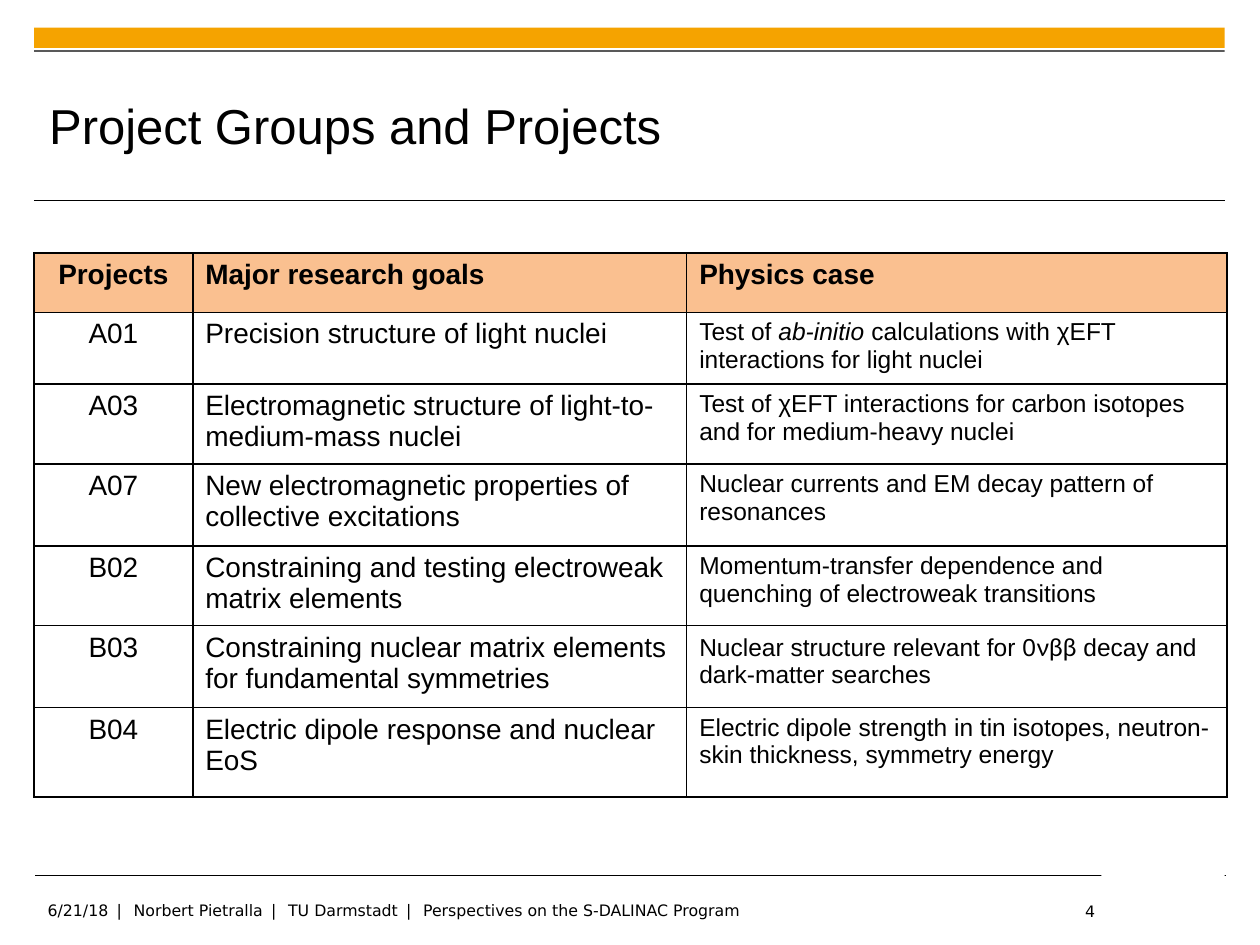
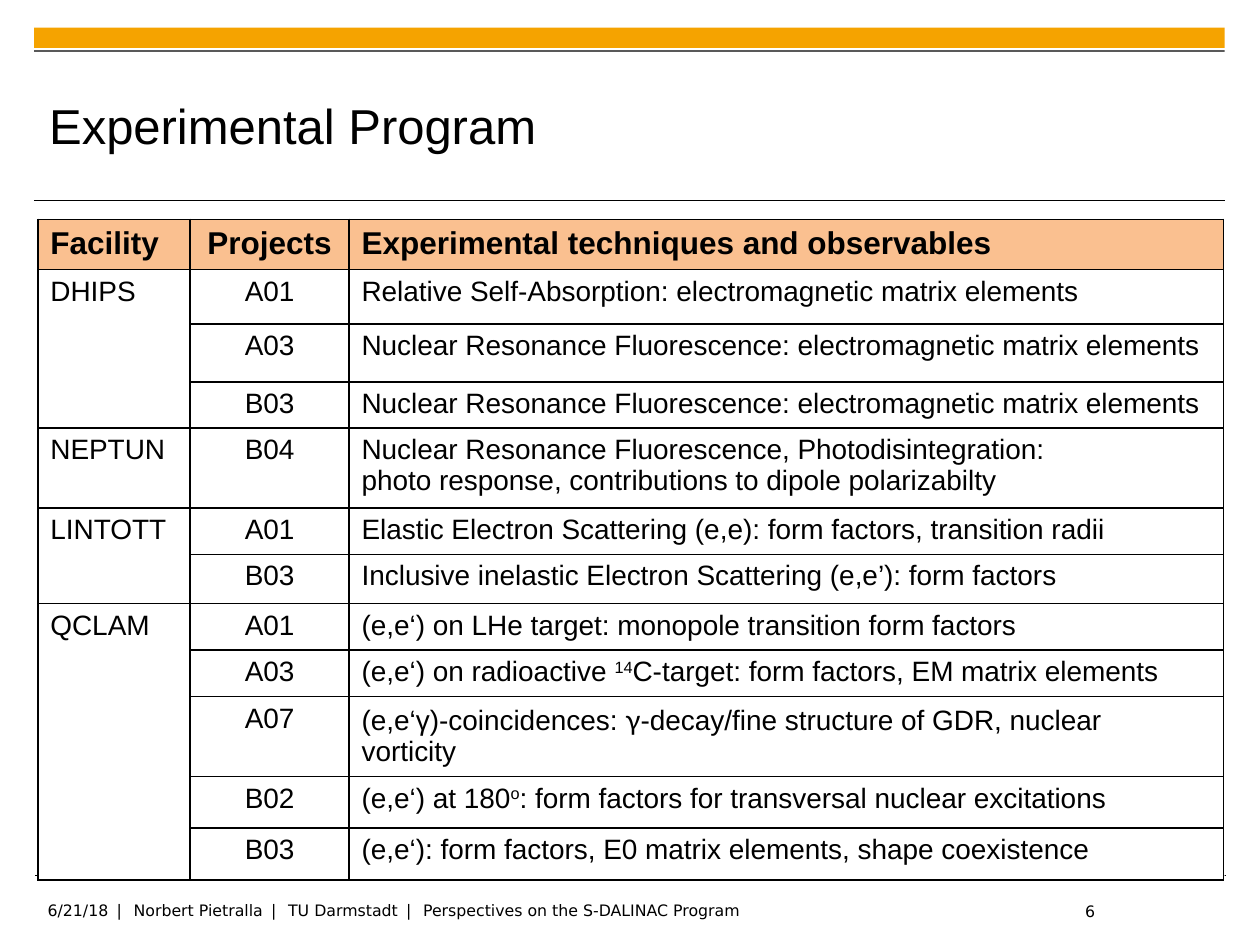
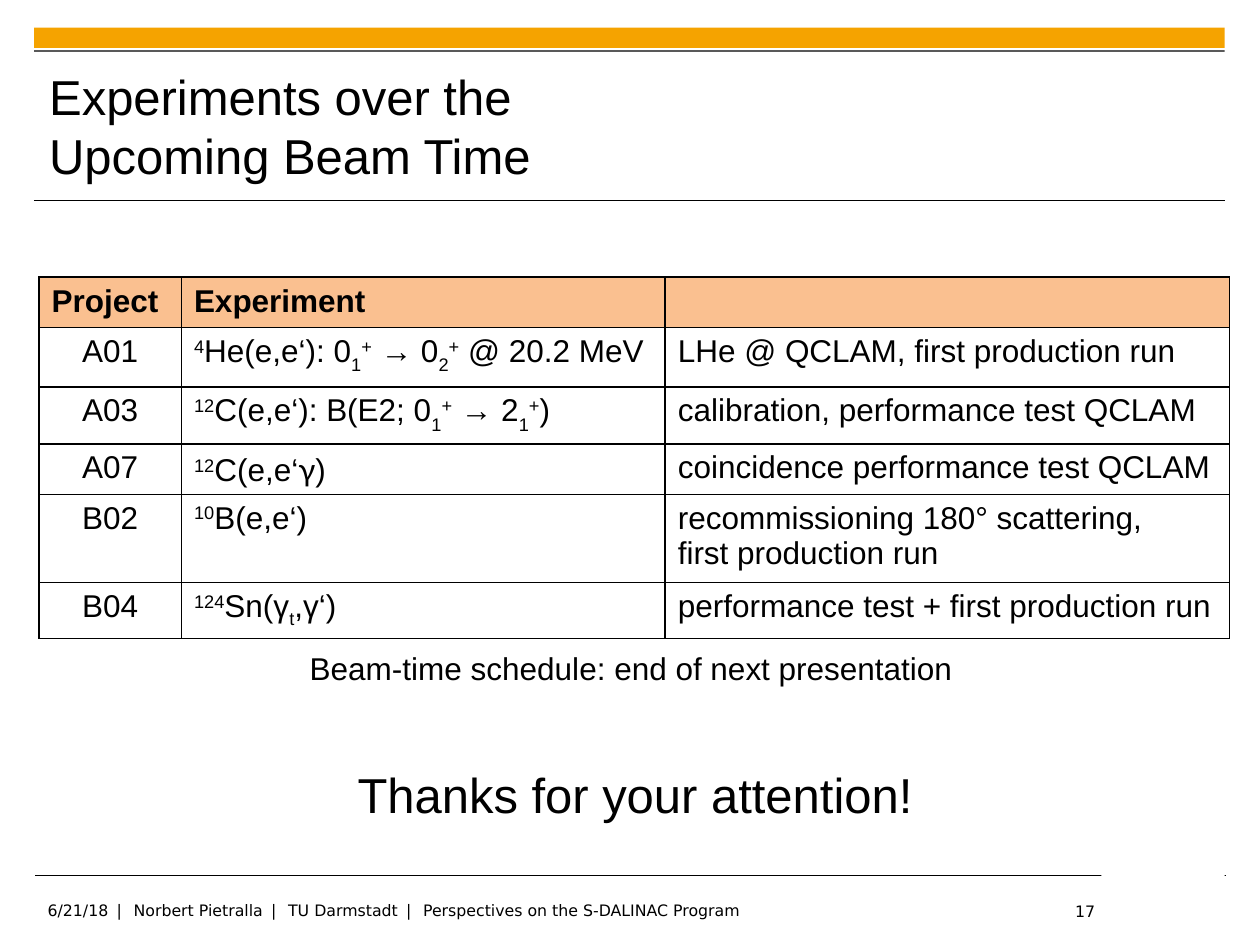
from dataclasses import dataclass
from functools import partial

from lxml.etree import SubElement
from pptx import Presentation
from pptx.dml.color import RGBColor
from pptx.enum.shapes import MSO_CONNECTOR, MSO_SHAPE
from pptx.enum.text import MSO_ANCHOR, PP_ALIGN
from pptx.oxml.ns import qn
from pptx.util import Inches, Pt


@dataclass(frozen=True)
class Theme:
    """Colours, fonts and type sizes shared by all slides."""
    ink: RGBColor = RGBColor(0x00, 0x00, 0x00)
    paper: RGBColor = RGBColor(0xFF, 0xFF, 0xFF)
    band: RGBColor = RGBColor(0xF5, 0xA3, 0x00)
    header: RGBColor = RGBColor(0xFA, 0xC0, 0x90)
    font: str = "Arial"
    footer_font: str = "DejaVu Sans"
    greek_font: str = "Lato"
    title_size: int = 28
    large_size: int = 18
    body_size: int = 16
    small_size: int = 14
    footer_size: int = 9
    rule_width: float = 0.6
    border_width: float = 1


@dataclass(frozen=True)
class Segment:
    """A stretch of text with its own baseline, slant or font."""
    text: str
    baseline: int = 0
    italic: bool = False
    font: str = Theme.font


THEME = Theme()
sup = partial(Segment, baseline=30)
sub = partial(Segment, baseline=-30)
italic = partial(Segment, italic=True)
greek = partial(Segment, font=THEME.greek_font)

FOOTER_PARTS = ["6/21/18", "Norbert Pietralla", "TU Darmstadt",
                "Perspectives on the S-DALINAC Program"]

PROJECT_ROWS = [
    ("Projects", "Major research goals", "Physics case"),
    ("A01", "Precision structure of light nuclei",
     ["Test of ", italic("ab-initio "),
      "calculations with χEFT interactions for light nuclei"]),
    ("A03", "Electromagnetic structure of light-to-medium-mass nuclei",
     "Test of χEFT interactions for carbon isotopes and for medium-heavy nuclei"),
    ("A07", "New electromagnetic properties of collective excitations",
     "Nuclear currents and EM decay pattern of resonances"),
    ("B02", "Constraining and testing electroweak matrix elements",
     "Momentum-transfer dependence and quenching of electroweak transitions"),
    ("B03", "Constraining nuclear matrix elements for fundamental symmetries",
     ["Nuclear structure relevant for 0", greek("νββ"),
      " decay and dark-matter searches"]),
    ("B04", "Electric dipole response and nuclear EoS",
     "Electric dipole strength in tin isotopes, neutron-skin thickness, symmetry energy"),
]

FACILITY_HEADER = ("Facility", "Projects", "Experimental techniques and observables")
FLUORESCENCE = "Nuclear Resonance Fluorescence: electromagnetic matrix elements"
FACILITIES = {
    "DHIPS": [
        ("A01", "Relative Self-Absorption: electromagnetic matrix elements"),
        ("A03", FLUORESCENCE),
        ("B03", FLUORESCENCE),
    ],
    "NEPTUN": [
        ("B04", "Nuclear Resonance Fluorescence, Photodisintegration:\n"
                "photo response, contributions to dipole polarizabilty"),
    ],
    "LINTOTT": [
        ("A01", "Elastic Electron Scattering (e,e): form factors, transition radii"),
        ("B03", "Inclusive inelastic Electron Scattering (e,e’): form factors"),
    ],
    "QCLAM": [
        ("A01", "(e,e‘) on LHe target: monopole transition form factors"),
        ("A03", ["(e,e‘) on radioactive ", sup("14"),
                 "C-target: form factors, EM matrix elements"]),
        ("A07", ["(e,e‘γ)-coincidences: ", greek("γ"),
                 "-decay/fine structure of GDR, nuclear\nvorticity"]),
        ("B02", ["(e,e‘) at 180", sup("o"),
                 ": form factors for transversal nuclear excitations"]),
        ("B03", "(e,e‘): form factors, E0 matrix elements, shape coexistence"),
    ],
}

BEAM_TIME_ROWS = [
    ("Project", "Experiment", ""),
    ("A01", [sup("4"), "He(e,e‘): 0", sub("1"), sup("+"), " → 0", sub("2"),
             sup("+"), " @ 20.2 MeV"],
     "LHe @ QCLAM, first production run"),
    ("A03", [sup("12"), "C(e,e‘): B(E2; 0", sub("1"), sup("+"), " → 2", sub("1"),
             sup("+"), ")"],
     "calibration, performance test QCLAM"),
    ("A07", [sup("12"), "C(e,e‘", greek("γ"), ")"],
     "coincidence performance test QCLAM"),
    ("B02", [sup("10"), "B(e,e‘)"],
     "recommissioning 180° scattering,\nfirst production run"),
    ("B04", [sup("124"), "Sn(γ", Segment("t", baseline=-25), ",γ‘)"],
     "performance test + first production run"),
]


def style_font(font, size, name=THEME.font, bold=False):
    """Apply size, typeface, weight and ink colour to a font."""
    font.size = Pt(size)
    font.name = name
    font.bold = bold
    font.color.rgb = THEME.ink


def write_segments(frame, content, size, bold=False, align=PP_ALIGN.LEFT):
    """Fill a text frame with plain text or segments; newlines start paragraphs."""
    paragraph = frame.paragraphs[0]
    paragraph.alignment = align
    for part in [content] if isinstance(content, str) else content:
        segment = Segment(part) if isinstance(part, str) else part
        for index, line in enumerate(segment.text.split("\n")):
            if index:
                paragraph = frame.add_paragraph()
                paragraph.alignment = align
            run = paragraph.add_run()
            run.text = line
            style_font(run.font, size, segment.font, bold)
            if segment.italic:
                run.font.italic = True
            if segment.baseline:
                run._r.get_or_add_rPr().set("baseline", str(segment.baseline * 1000))


def add_bar(slide, left, top, width, height, color):
    """Add a borderless filled rectangle."""
    bar = slide.shapes.add_shape(MSO_SHAPE.RECTANGLE, Inches(left), Inches(top),
                                 Inches(width), Inches(height))
    bar.shadow.inherit = False
    bar.fill.solid()
    bar.fill.fore_color.rgb = color
    bar.line.fill.background()
    return bar


def add_rule(slide, left, top, width):
    """Add a thin horizontal line."""
    rule = slide.shapes.add_connector(MSO_CONNECTOR.STRAIGHT, Inches(left), Inches(top),
                                      Inches(left + width), Inches(top))
    rule.line.color.rgb = THEME.ink
    rule.line.width = Pt(THEME.rule_width)
    SubElement(rule._element.spPr, qn("a:effectLst"))
    return rule


def add_text(slide, left, top, width, height, text, size, align=PP_ALIGN.LEFT, wrap=True):
    """Add a text box with one styled text."""
    box = slide.shapes.add_textbox(Inches(left), Inches(top), Inches(width), Inches(height))
    box.text_frame.word_wrap = wrap
    write_segments(box.text_frame, text, size, align=align)
    return box


def add_footer(slide):
    """Add the footer line with widely spaced separators."""
    footer = add_text(slide, 0.28, 7.1, 7.87, 0.25, "", THEME.footer_size)
    paragraph = footer.text_frame.paragraphs[0]
    for index, part in enumerate(FOOTER_PARTS):
        for text in [" | ", part] if index else [part]:
            run = paragraph.add_run()
            run.text = text
            style_font(run.font, THEME.footer_size, THEME.footer_font)
            if text == " | ":
                run._r.get_or_add_rPr().set("spc", "190")
    return footer


def move_frame_to_master(prs, slide):
    """Build the band, rules and footer and place them on the slide master."""
    frame = [
        add_bar(slide, 0.27, 0.22, 9.45, 0.16, THEME.band),
        add_rule(slide, 0.27, 1.59, 9.45),
        add_bar(slide, 0.27, 0.4, 9.45, 0.01, THEME.ink),
        add_rule(slide, 0.28, 6.95, 9.45),
        add_footer(slide),
        add_bar(slide, 8.74, 6.77, 0.98, 0.32, THEME.paper),
    ]
    for number, part in enumerate(frame, start=20):
        part._element.xpath(".//p:cNvPr")[0].set("id", str(number))
        prs.slide_master.shapes._spTree.append(part._element)


def add_content_slide(prs, heading, page):
    """Add a slide with its heading and page number."""
    slide = prs.slides.add_slide(prs.slide_layouts[5])
    title = slide.shapes.title
    title.left, title.top = Inches(0.39), Inches(0.48)
    title.width, title.height = Inches(7.26), Inches(1.03)
    frame = title.text_frame
    frame.margin_left = frame.margin_right = frame.margin_top = frame.margin_bottom = 0
    frame.vertical_anchor = MSO_ANCHOR.MIDDLE
    write_segments(frame, heading, THEME.title_size)
    add_text(slide, 7.48, 7.11, 1.31, 0.25,
             [Segment(str(page), font=THEME.footer_font)], THEME.footer_size,
             PP_ALIGN.RIGHT, wrap=False)
    return slide


def style_cell(cell, color):
    """Give a cell its borders and fill."""
    properties = cell._tc.get_or_add_tcPr()
    for side in ("lnL", "lnR", "lnT", "lnB"):
        border = SubElement(properties, qn(f"a:{side}"), w=str(Pt(THEME.border_width)))
        fill = SubElement(border, qn("a:solidFill"))
        SubElement(fill, qn("a:srgbClr"), val=str(THEME.ink))
    cell.fill.solid()
    cell.fill.fore_color.rgb = color


def add_grid(slide, left, top, widths, heights, rows, sizes, header_size,
             centred, header_centred=True):
    """Add a bordered table with a tinted header and one centred column."""
    table = slide.shapes.add_table(len(rows), len(widths), Inches(left), Inches(top),
                                   Inches(sum(widths)), Inches(sum(heights))).table
    table.horz_banding = False
    for column, width in zip(table.columns, widths):
        column.width = Inches(width)
    for row, height in zip(table.rows, heights):
        row.height = Inches(height)
    for row_index, row in enumerate(rows):
        is_header = row_index == 0
        for column_index, content in enumerate(row):
            cell = table.cell(row_index, column_index)
            style_cell(cell, THEME.header if is_header else THEME.paper)
            is_centred = column_index == centred and (header_centred or not is_header)
            if content:
                write_segments(cell.text_frame, content,
                               header_size if is_header else sizes[column_index],
                               is_header,
                               PP_ALIGN.CENTER if is_centred else PP_ALIGN.LEFT)
    return table


def add_facility_table(slide):
    """Add the table of facilities, merging each facility over its projects."""
    rows = [FACILITY_HEADER]
    for facility, projects in FACILITIES.items():
        rows += [("" if index else facility, *project)
                 for index, project in enumerate(projects)]
    table = add_grid(slide, 0.3, 1.74, [1.21, 1.26, 6.94],
                     [0.38, 0.43, 0.46, 0.36, 0.63, 0.37, 0.39, 0.37, 0.37, 0.61, 0.41, 0.41],
                     rows, [THEME.body_size] * 3, THEME.large_size, centred=1)
    first = 1
    for projects in FACILITIES.values():
        last = first + len(projects) - 1
        if last > first:
            table.cell(first, 0).merge(table.cell(last, 0))
        first = last + 1


def main():
    """Build the three slides and save them."""
    prs = Presentation()
    prs.slide_width, prs.slide_height = Inches(10), Inches(7.5)

    projects = add_content_slide(prs, "Project Groups and Projects", 4)
    move_frame_to_master(prs, projects)
    add_grid(projects, 0.27, 2.01, [1.26, 3.92, 4.29],
             [0.47, 0.57, 0.63, 0.65, 0.63, 0.65, 0.71], PROJECT_ROWS,
             [THEME.body_size, THEME.body_size, THEME.small_size], THEME.body_size,
             centred=0)

    program = add_content_slide(prs, "Experimental Program", 6)
    add_facility_table(program)

    beam_time = add_content_slide(prs, "Experiments over the\nUpcoming Beam Time", 17)
    add_grid(beam_time, 0.31, 2.2, [1.13, 3.84, 4.48],
             [0.38, 0.47, 0.44, 0.4, 0.66, 0.42], BEAM_TIME_ROWS,
             [THEME.large_size] * 3, THEME.large_size, centred=0, header_centred=False)
    add_text(beam_time, 2.56, 6.02, 4.96, 0.53, "Thanks for your attention!",
             THEME.title_size, PP_ALIGN.CENTER)
    add_text(beam_time, 2.36, 5.1, 5.35, 0.4,
             "Beam-time schedule: end of next presentation", THEME.large_size, wrap=False)

    prs.save("out.pptx")


if __name__ == "__main__":
    main()
